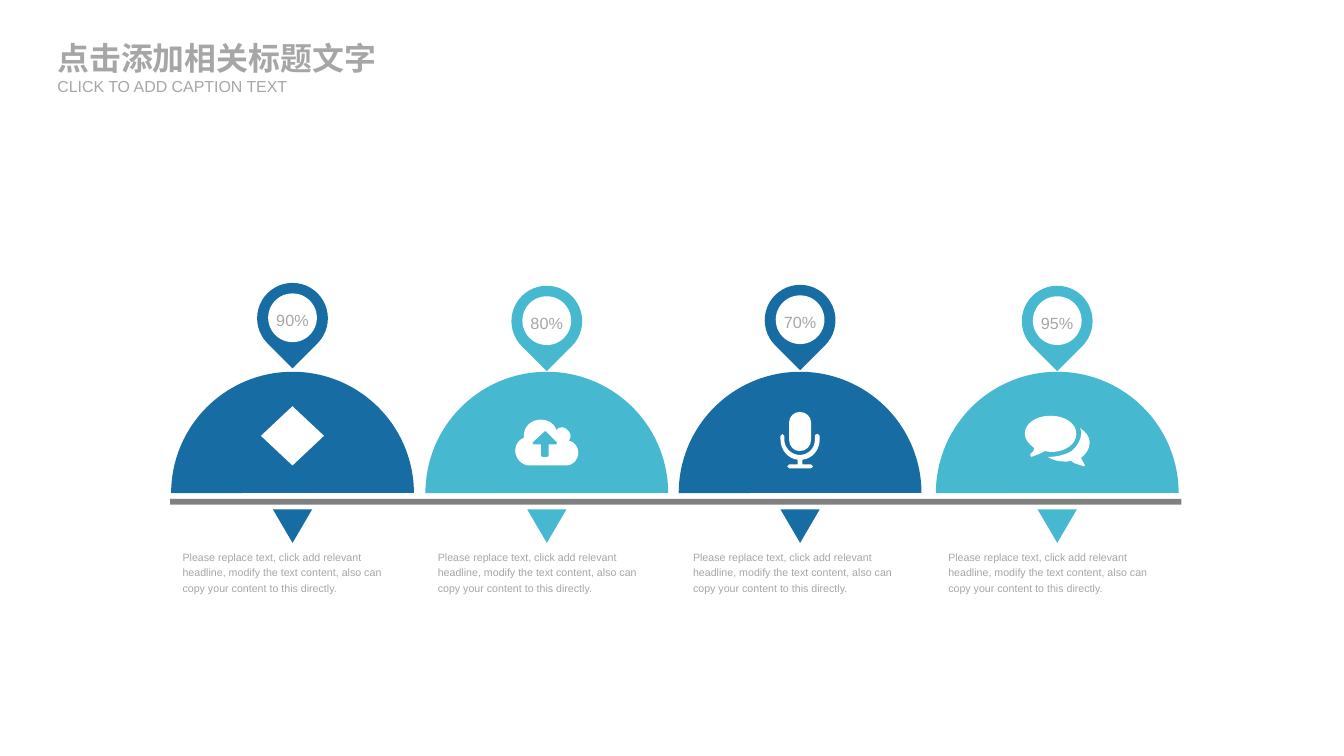
import pptx
import pptx.dml.color
import pptx.enum.shapes
import pptx.enum.text
import pptx.oxml.ns
import pptx.util

Inches = pptx.util.Inches
Pt = pptx.util.Pt
RGBColor = pptx.dml.color.RGBColor
SHAPE = pptx.enum.shapes.MSO_SHAPE
ALIGN = pptx.enum.text.PP_ALIGN
ANCHOR = pptx.enum.text.MSO_ANCHOR
qn = pptx.oxml.ns.qn

NAVY = RGBColor(0x16, 0x6C, 0xA3)
AQUA = RGBColor(0x46, 0xB9, 0xD0)
WHITE = RGBColor(0xFF, 0xFF, 0xFF)
GREY = RGBColor(0x80, 0x80, 0x80)
TEXT_GREY = RGBColor(0xA6, 0xA6, 0xA6)

NOTE = ("Please replace text, click add relevant headline, modify the text content, "
        "also can copy your content to this directly.")
NOTE_LEFT, NOTE_PITCH = 1.91, 2.67
DOME_SIZE = 2.54
PIN_SIZE = 0.74
DISC_SIZE = 0.51

CLOUD = [
    [(53, 48), (15, 48), (7, 48, 0, 41, 0, 32), (0, 26, 4, 21, 9, 19), (9, 17),
     (9, 7, 17, 0, 27, 0), (33, 0, 41, 3, 43, 11), (44, 9, 47, 8, 49, 8),
     (53, 8, 58, 13, 58, 17), (58, 19, 57, 21, 56, 22), (62, 23, 66, 29, 66, 34),
     (66, 42, 61, 48, 53, 48)],
    [(44, 24), (32, 12), (31, 12), (18, 24), (19, 26), (27, 26), (27, 38), (28, 39),
     (34, 39), (35, 38), (35, 26), (43, 26)],
]
MICROPHONE = [
    [(41, 29), (41, 40, 33, 49, 23, 50), (23, 55), (32, 55), (33, 55, 34, 56, 34, 57),
     (34, 58, 33, 59, 32, 59), (9, 59), (8, 59, 7, 58, 7, 57), (7, 56, 8, 55, 9, 55),
     (18, 55), (18, 50), (8, 49, 0, 40, 0, 29), (0, 25), (0, 24, 1, 23, 2, 23),
     (3, 23, 4, 24, 4, 25), (4, 29), (4, 38, 12, 45, 20, 45), (29, 45, 36, 38, 36, 29),
     (36, 25), (36, 24, 37, 23, 39, 23), (40, 23, 41, 24, 41, 25)],
    [(32, 29), (32, 36, 27, 41, 20, 41), (14, 41, 9, 36, 9, 29), (9, 11),
     (9, 5, 14, 0, 20, 0), (27, 0, 32, 5, 32, 11)],
]
CHAT = [
    [(27, 38), (25, 38, 23, 37, 21, 37), (17, 39, 14, 41, 10, 42), (9, 42, 8, 43, 7, 43),
     (6, 43, 6, 42, 6, 42), (5, 41, 6, 40, 6, 40), (8, 38, 10, 37, 10, 34),
     (5, 30, 0, 25, 0, 19), (0, 8, 12, 0, 27, 0), (42, 0, 54, 8, 54, 19),
     (54, 30, 42, 38, 27, 38)],
    [(59, 44), (60, 47, 61, 48, 62, 50), (63, 51, 63, 51, 63, 52), (63, 53, 63, 53, 62, 53),
     (61, 53, 60, 53, 59, 52), (55, 51, 52, 50, 48, 47), (46, 48, 44, 48, 42, 48),
     (35, 48, 28, 46, 24, 43), (27, 43), (35, 43, 44, 40, 49, 37),
     (55, 32, 59, 25, 59, 19), (59, 17, 59, 15, 58, 13), (64, 17, 68, 22, 68, 28),
     (68, 35, 64, 40, 59, 44)],
]

COLUMNS = [
    (3.06, 2.96, "90%", NAVY, None, 4.25),
    (5.72, 2.99, "80%", AQUA, CLOUD, 4.39),
    (8.37, 2.98, "70%", NAVY, MICROPHONE, 4.31),
    (11.06, 2.99, "95%", AQUA, CHAT, 4.35),
]


def paint(shape, color):
    shape.shadow.inherit = False
    shape.fill.solid()
    shape.fill.fore_color.rgb = color
    shape.line.fill.background()


def add_solid(shapes, kind, left, top, width, height, color, rotation=0):
    shape = shapes.add_shape(kind, Inches(left), Inches(top), Inches(width), Inches(height))
    shape.rotation = rotation
    paint(shape, color)
    return shape


def write(box, text, size, bold=False, align=ALIGN.LEFT, anchor=ANCHOR.TOP,
          spacing=1.0, before=0, wrap=True):
    frame = box.text_frame
    frame.text = text
    frame.word_wrap = wrap
    frame.auto_size = pptx.enum.text.MSO_AUTO_SIZE.NONE
    frame.vertical_anchor = anchor
    frame.margin_left = frame.margin_top = frame.margin_right = frame.margin_bottom = 0
    para = frame.paragraphs[0]
    para.alignment = align
    para.line_spacing = spacing
    para.space_before = Pt(before)
    font = para.runs[0].font
    font.name = "Arial"
    font.size = Pt(size)
    font.bold = bold
    font.color.rgb = TEXT_GREY


def place(box, left, top, width, height):
    box.left, box.top = Inches(left), Inches(top)
    box.width, box.height = Inches(width), Inches(height)


def control_points(contour):
    return [(Inches(piece[i] / 100), Inches(piece[i + 1] / 100))
            for piece in contour for i in range(0, len(piece), 2)]


def bend_curves(icon, outline):
    track = icon.element.find(".//" + qn("a:path"))
    lines = iter(track.findall(qn("a:lnTo")))
    for contour in outline:
        for piece in contour[1:]:
            segment = next(lines)
            if len(piece) == 6:
                segment.tag = qn("a:cubicBezTo")
                for line in (next(lines), next(lines)):
                    segment.append(line[0])
                    track.remove(line)


def add_icon(page, outline, center, top):
    contours = [control_points(contour) for contour in outline]
    builder = page.shapes.build_freeform(*contours[0][0])
    builder.add_line_segments(contours[0][1:])
    for points in contours[1:]:
        builder.move_to(*points[0])
        builder.add_line_segments(points[1:])
    width = max(x for points in contours for x, y in points)
    icon = builder.convert_to_shape(Inches(center) - width // 2, Inches(top))
    bend_curves(icon, outline)
    paint(icon, WHITE)


def add_dome(page, center, color):
    dome = add_solid(page.shapes, SHAPE.CHORD, center - DOME_SIZE / 2, 3.89,
                     DOME_SIZE, DOME_SIZE, color, 112.4)
    dome.adjustments[0] = 40.58
    dome.adjustments[1] = 148.46


def add_pin(page, center, top, label, color):
    pin = page.shapes.add_group_shape()
    add_solid(pin.shapes, SHAPE.TEAR, center - PIN_SIZE / 2, top,
              PIN_SIZE, PIN_SIZE, color, 135)
    disc = add_solid(pin.shapes, SHAPE.OVAL, center - DISC_SIZE / 2, top + 0.11,
                     DISC_SIZE, DISC_SIZE, WHITE)
    write(disc, label, 12.2, align=ALIGN.CENTER, anchor=ANCHOR.MIDDLE,
          spacing=1.2, wrap=False)


def add_note(page, left):
    box = page.shapes.add_textbox(Inches(left), Inches(5.74), Inches(2.29), Inches(0.47))
    write(box, NOTE, 8, spacing=1.2, before=1.6)


def main():
    deck = pptx.Presentation()
    deck.slide_width, deck.slide_height = Inches(14.06), Inches(7.91)
    page = deck.slides.add_slide(deck.slide_layouts[0])

    title, caption = page.placeholders
    place(title, 0.6, 0.4, 3.52, 0.4)
    write(title, "点击添加相关标题文字", 24, bold=True, before=4.8)
    place(caption, 0.6, 0.8, 2.89, 0.2)
    write(caption, "CLICK TO ADD CAPTION TEXT", 12)

    add_solid(page.shapes, SHAPE.RECTANGLE, 1.78, 5.22, 10.58, 0.06, GREY)
    for index, (center, pin_top, label, color, outline, icon_top) in enumerate(COLUMNS):
        add_dome(page, center, color)
        add_pin(page, center, pin_top, label, color)
        add_solid(page.shapes, SHAPE.ISOSCELES_TRIANGLE, center - 0.205, 5.33,
                  0.41, 0.35, color, 180)
        add_note(page, NOTE_LEFT + index * NOTE_PITCH)
        if outline:
            add_icon(page, outline, center, icon_top)
        else:
            add_solid(page.shapes, SHAPE.DIAMOND, center - 0.33, icon_top, 0.66, 0.62, WHITE)

    deck.save("out.pptx")


if __name__ == "__main__":
    main()
